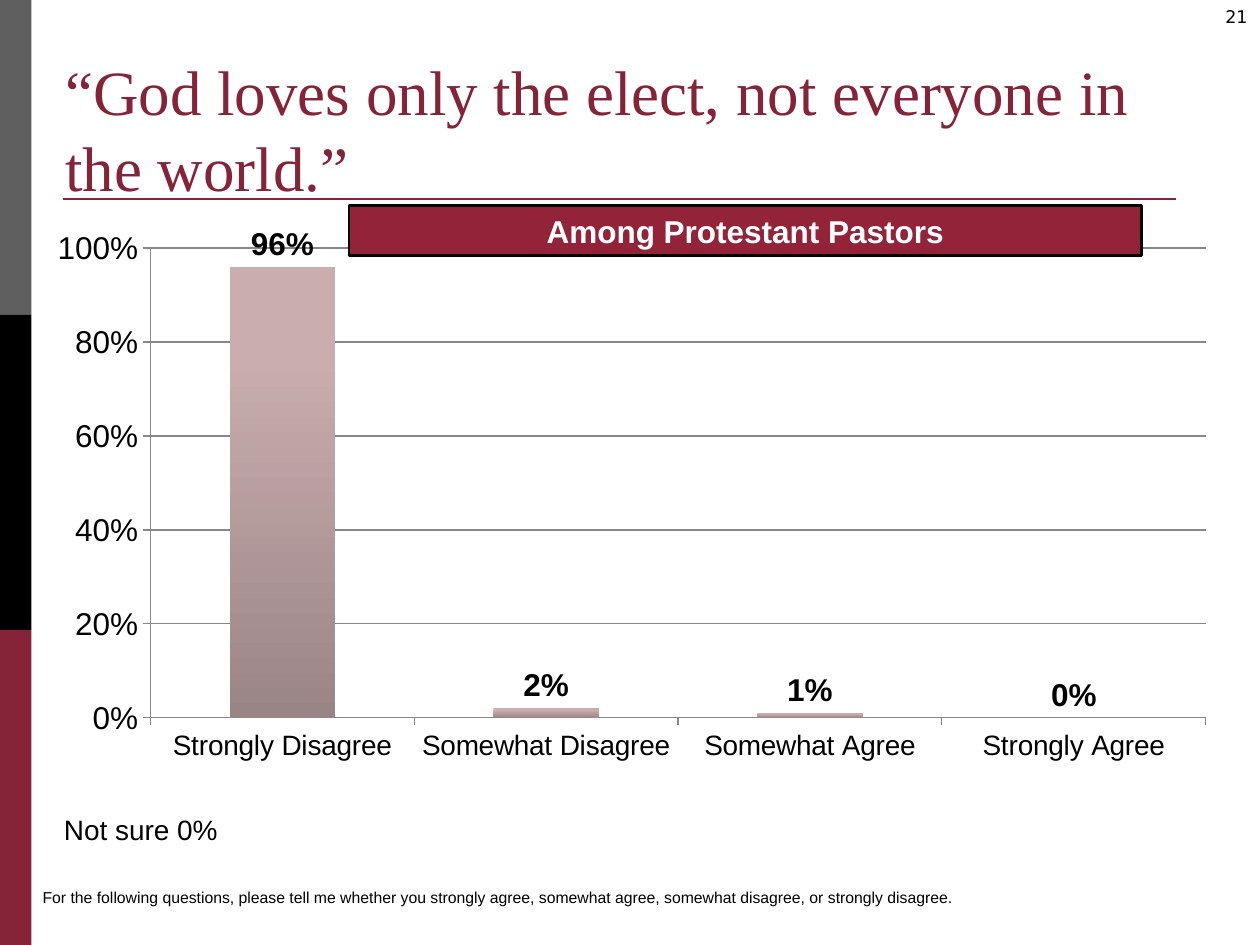
"""Build the survey slide on Protestant pastors' views of the elect."""
from dataclasses import dataclass, field
from typing import Any

from lxml.etree import SubElement
from pptx import Presentation
from pptx.chart.data import CategoryChartData
from pptx.dml.color import RGBColor
from pptx.enum.chart import XL_CHART_TYPE, XL_LABEL_POSITION, XL_TICK_MARK
from pptx.enum.shapes import MSO_CONNECTOR, MSO_SHAPE
from pptx.enum.text import MSO_ANCHOR, PP_ALIGN
from pptx.oxml.ns import qn
from pptx.util import Inches, Pt

COLORS = {
    "maroon": "852338",
    "banner": "922339",
    "gray": "5F5F5F",
    "black": "000000",
    "white": "FFFFFF",
    "bar_top": "C9ADAF",
    "bar_bottom": "9A8586",
    "grid": "878787",
}
COLUMNS, ROWS = 100, 75
SLIDE_WIDTH, SLIDE_HEIGHT = Inches(10), Inches(7.5)
PERCENT = "0%"


@dataclass(frozen=True)
class Area:
    left: float
    top: float
    width: float
    height: float

    def lengths(self) -> tuple[int, ...]:
        return (across(self.left), down(self.top), across(self.width), down(self.height))


@dataclass(frozen=True)
class Label:
    text: str
    area: Area
    size: float
    font: str = "Arial"
    color: str = "black"
    bold: bool = False
    frame: dict[str, Any] = field(default_factory=dict)
    alignment: PP_ALIGN = PP_ALIGN.LEFT


@dataclass(frozen=True)
class Band:
    color: str
    area: Area


BANDS = [
    Band(color, Area(0, index * ROWS / 3, 2.5, ROWS / 3))
    for index, color in enumerate(("gray", "black", "maroon"))
]
TITLE = Label("“God loves only the elect, not everyone in the world.”",
              Area(4.2, 2.7, 93.6, 14), 36, "Times New Roman", "maroon",
              frame={"vertical_anchor": MSO_ANCHOR.BOTTOM})
LABELS = [
    Label("21", Area(95, 0, 5, 3.3), 10, "DejaVu Sans", alignment=PP_ALIGN.RIGHT),
    TITLE,
    Label("For the following questions, please tell me whether you strongly agree, "
          "somewhat agree, somewhat disagree, or strongly disagree.",
          Area(2.4, 70, 76.6, 2.5), 9),
    Label("Not sure 0%", Area(4.1, 64, 17.6, 3.7), 16),
]
BANNER = Label("Among Protestant Pastors", Area(27.7, 16.3, 62.9, 4), 18,
               color="white", bold=True, frame={"vertical_anchor": MSO_ANCHOR.MIDDLE},
               alignment=PP_ALIGN.CENTER)
CHART_AREA = Area(3, 17.2, 94.2, 46.2)
PLOT_SHARES = {"x": 0.095, "y": 0.054, "w": 0.889, "h": 0.807}
RESPONSES = {
    "Strongly Disagree": 0.96,
    "Somewhat Disagree": 0.02,
    "Somewhat Agree": 0.01,
    "Strongly Agree": 0,
}


def across(columns: float) -> int:
    return round(SLIDE_WIDTH * columns / COLUMNS)


def down(rows: float) -> int:
    return round(SLIDE_HEIGHT * rows / ROWS)


def rgb(name: str) -> RGBColor:
    return RGBColor.from_string(COLORS[name])


def apply_format(target: Any, values: dict[str, Any]) -> None:
    for name, value in values.items():
        setattr(target, name, value)


def format_font(font: Any, size: float, name: str = "Arial",
                color: str = "black", bold: bool = False) -> None:
    apply_format(font, {"size": Pt(size), "name": name, "bold": bold})
    font.color.rgb = rgb(color)


def format_line(line: Any, color: str, width: float) -> None:
    line.color.rgb = rgb(color)
    line.width = Pt(width)


def write_label(shape: Any, label: Label) -> None:
    apply_format(shape.text_frame, {"word_wrap": True, **label.frame})
    paragraph = shape.text_frame.paragraphs[0]
    paragraph.text = label.text
    paragraph.alignment = label.alignment
    format_font(paragraph.runs[0].font, label.size, label.font, label.color, label.bold)


def draw_label(slide: Any, label: Label) -> None:
    write_label(slide.shapes.add_textbox(*label.area.lengths()), label)


def draw_band(slide: Any, band: Band) -> Any:
    shape = slide.shapes.add_shape(MSO_SHAPE.RECTANGLE, *band.area.lengths())
    shape.shadow.inherit = False
    shape.fill.solid()
    shape.fill.fore_color.rgb = rgb(band.color)
    shape.line.fill.background()
    return shape


def draw_rule(slide: Any, left: float, right: float, top: float) -> None:
    connector = slide.shapes.add_connector(
        MSO_CONNECTOR.STRAIGHT, across(left), down(top), across(right), down(top))
    format_line(connector.line, "maroon", 1.5)
    SubElement(connector._element.spPr, qn("a:effectLst"))


def place_plot(chart: Any) -> None:
    plot_area = chart._chartSpace.chart.plotArea
    layout = plot_area.find(qn("c:layout"))
    if layout is None:
        layout = plot_area.makeelement(qn("c:layout"))
        plot_area.insert(0, layout)
    manual = SubElement(layout, qn("c:manualLayout"))
    settings = {"layoutTarget": "inner", "xMode": "edge", "yMode": "edge", **PLOT_SHARES}
    for name, value in settings.items():
        SubElement(manual, qn(f"c:{name}")).set("val", str(value))


def draw_chart(slide: Any) -> None:
    chart_data = CategoryChartData(number_format=PERCENT)
    chart_data.categories = list(RESPONSES)
    chart_data.add_series("Series 1", list(RESPONSES.values()))
    chart = slide.shapes.add_chart(
        XL_CHART_TYPE.COLUMN_CLUSTERED, *CHART_AREA.lengths(), chart_data).chart
    apply_format(chart, {"has_legend": False, "has_title": False})
    format_font(chart.font, 18)
    place_plot(chart)

    value_axis = chart.value_axis
    apply_format(value_axis, {"minimum_scale": 0, "maximum_scale": 1,
                              "major_unit": 0.2, "has_major_gridlines": True})
    apply_format(value_axis.tick_labels,
                 {"number_format": PERCENT, "number_format_is_linked": False})
    format_line(value_axis.major_gridlines.format.line, "grid", 0.75)
    for axis, size in ((chart.category_axis, 16), (value_axis, 18)):
        axis.major_tick_mark = XL_TICK_MARK.OUTSIDE
        format_font(axis.tick_labels.font, size)
        format_line(axis.format.line, "grid", 0.75)

    plot = chart.plots[0]
    apply_format(plot, {"gap_width": 150, "vary_by_categories": False,
                        "has_data_labels": True})
    apply_format(plot.data_labels, {
        "show_value": True, "number_format": PERCENT,
        "number_format_is_linked": False, "position": XL_LABEL_POSITION.OUTSIDE_END})
    format_font(plot.data_labels.font, 18, bold=True)
    fill = plot.series[0].format.fill
    fill.gradient()
    fill.gradient_angle = 270
    stops = (("bar_top", 0.2), ("bar_bottom", 1))
    for stop, (color, position) in zip(fill.gradient_stops, stops):
        stop.color.rgb = rgb(color)
        stop.position = position


def main() -> None:
    presentation = Presentation()
    apply_format(presentation, {"slide_width": SLIDE_WIDTH, "slide_height": SLIDE_HEIGHT})
    slide = presentation.slides.add_slide(presentation.slide_layouts[6])
    for band in BANDS:
        draw_band(slide, band)
    draw_rule(slide, 5, 93.3, 15.8)
    draw_chart(slide)
    for label in LABELS:
        draw_label(slide, label)
    banner = draw_band(slide, Band("banner", BANNER.area))
    format_line(banner.line, "black", 1.5)
    write_label(banner, BANNER)
    presentation.save("out.pptx")


if __name__ == "__main__":
    main()
